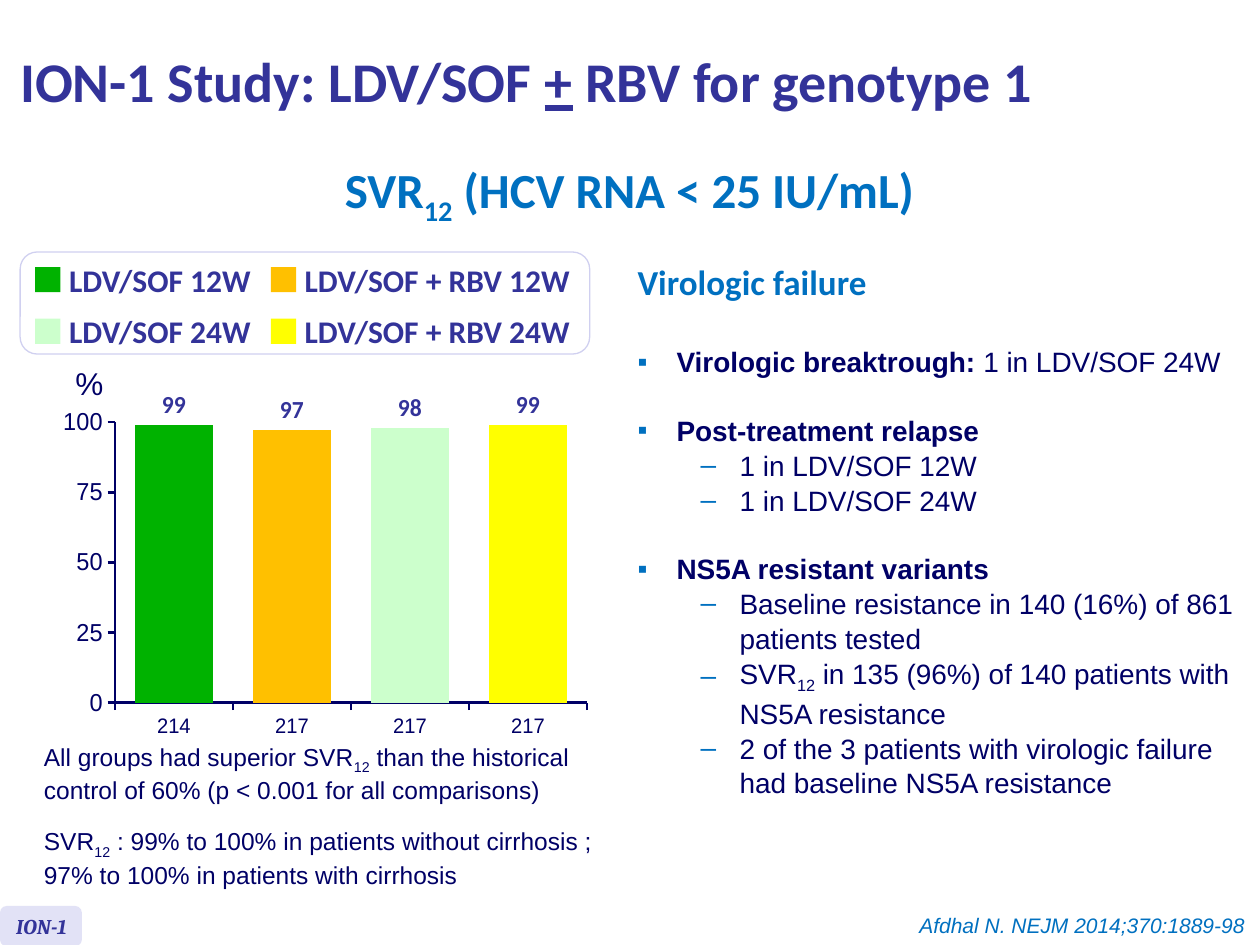
"""Build the ION-1 study slide: SVR12 column chart and virologic failure list."""
from lxml import etree
from pptx import Presentation
from pptx.chart.data import CategoryChartData
from pptx.dml.color import RGBColor
from pptx.enum import chart as ch, shapes, text
from pptx.oxml.ns import qn
from pptx.util import Inches, Pt

NAVY, INDIGO, BLUE = "000066", "333399", "0070C0"
rgb = RGBColor.from_string


def add_runs(paragraph, parts, size, color, font="Arial", bold=False, italic=False):
    for part in parts:
        words, style = part if isinstance(part, tuple) else (part, "")
        run = paragraph.add_run()
        run.text = words
        run.font.size = Pt(size)
        run.font.name = font
        run.font.color.rgb = rgb(color)
        run.font.bold = bold or style == "bold"
        run.font.italic = italic
        if style == "under":
            run.font.underline = True
        if style == "sub":
            run.font._element.set("baseline", "-25000")


def add_box(shape_type, box, fill, line=None):
    shape = slide.shapes.add_shape(shape_type, *map(Inches, box))
    shape.shadow.inherit = False
    shape.fill.solid()
    shape.fill.fore_color.rgb = rgb(fill)
    if line:
        shape.line.color.rgb = rgb(line)
        shape.line.width = Pt(0.75)
    else:
        shape.line.fill.background()


prs = Presentation()
prs.slide_width, prs.slide_height = Inches(10), Inches(7.5)
slide = prs.slides.add_slide(prs.slide_layouts[1])

title = slide.shapes.title
title.left, title.top, title.width, title.height = map(Inches, (0.06, 0.03, 9.83, 1.21))
title.text_frame.vertical_anchor = text.MSO_ANCHOR.MIDDLE
heading = title.text_frame.paragraphs[0]
heading.alignment = text.PP_ALIGN.LEFT
add_runs(heading, ["ION-1 Study: LDV/SOF ", ("+", "under"), " RBV for genotype 1"],
         32, INDIGO, "Calibri", bold=True)

ROUND, RECT = shapes.MSO_SHAPE.ROUNDED_RECTANGLE, shapes.MSO_SHAPE.RECTANGLE
add_box(ROUND, (0.16, 2, 4.52, 0.81), "FFFFFF", "D0D0F0")
add_box(ROUND, (0, 7.19, 0.65, 0.32), "E2E2F6")

LEFT, CENTER, RIGHT = text.PP_ALIGN.LEFT, text.PP_ALIGN.CENTER, text.PP_ALIGN.RIGHT
calibri_bold = {"font": "Calibri", "bold": True}
captions = [
    ((2.59, 1.22, 4.81, 0.57), CENTER, False, 28, BLUE, calibri_bold,
     [["SVR", ("12", "sub"), " (HCV RNA < 25 IU/mL)"]]),
    ((0.5, 2.84, 0.42, 0.4), LEFT, False, 18, NAVY, {}, [["%"]]),
    ((0.25, 5.84, 4.79, 0.57), LEFT, True, 14, NAVY, {},
     [["All groups had superior SVR", ("12", "sub"), " than the historical"],
      ["control of 60% (p < 0.001 for all comparisons)"]]),
    ((0.25, 6.51, 4.96, 0.57), LEFT, True, 14, NAVY, {},
     [["SVR", ("12", "sub"), " : 99% to 100% in patients without cirrhosis ;"],
      ["97% to 100% in patients with cirrhosis"]]),
    ((0.03, 7.2, 0.79, 0.3), LEFT, True, 12, INDIGO,
     {"font": "Cambria", "bold": True, "italic": True}, [["ION-1"]]),
    ((6.17, 7.19, 3.81, 0.3), RIGHT, True, 12, BLUE, {"italic": True},
     [["Afdhal N. NEJM 2014;370:1889-98"]]),
]

arms = [("LDV/SOF 12W", "00B200", 217 - 3, 99), ("LDV/SOF + RBV 12W", "FFC000", 217, 97),
        ("LDV/SOF 24W", "CCFFCC", 217, 98), ("LDV/SOF + RBV 24W", "FFFF00", 217, 99)]
for i, (arm, color, patients, svr) in enumerate(arms):
    x, y = 0.28 + 1.87 * (i % 2), 2.12 + 0.41 * (i // 2)
    add_box(RECT, (x, y, 0.2, 0.2), color)
    captions.append(((x + 0.17, y - 0.1, 1.69 + 0.67 * (i % 2), 0.4), LEFT, False,
                     18, INDIGO, calibri_bold, [[arm]]))

for box, align, wrap, size, color, style, lines in captions:
    frame = slide.shapes.add_textbox(*map(Inches, box)).text_frame
    frame.word_wrap = wrap
    for i, parts in enumerate(lines):
        paragraph = frame.add_paragraph() if i else frame.paragraphs[0]
        paragraph.alignment = align
        add_runs(paragraph, parts, size, color, **style)

failures = slide.placeholders[1]
failures.left, failures.top, failures.width, failures.height = map(Inches, (4.96, 2.02, 4.98, 4.27))
frame = failures.text_frame
frame.auto_size = text.MSO_AUTO_SIZE.NONE
findings = [
    ("", 0, ["Virologic failure"]),
    ("▪", 23.6, [("Virologic breaktrough:", "bold"), " 1 in LDV/SOF 24W"]),
    ("▪", 19.2, [("Post-treatment relapse", "bold")]),
    ("–", 0, ["1 in LDV/SOF 12W"]),
    ("–", 0, ["1 in LDV/SOF 24W"]),
    ("▪", 19.2, [("NS5A resistant variants", "bold")]),
    ("–", 0, ["Baseline resistance in 140 (16%) of 861 patients tested"]),
    ("–", 0, ["SVR", ("12", "sub"), " in 135 (96%) of 140 patients with NS5A resistance"]),
    ("–", 0, ["2 of the 3 patients with virologic failure had baseline NS5A resistance"]),
]
for i, (bullet, gap, parts) in enumerate(findings):
    paragraph = frame.add_paragraph() if i else frame.paragraphs[0]
    paragraph.level = 1 if bullet == "–" else 0
    paragraph.space_before = Pt(gap)
    props = paragraph._p.get_or_add_pPr()
    if bullet:
        paragraph.line_spacing = 1.04
        props.set("marL", str(Inches(0.31 + 0.5 * paragraph.level)))
        props.set("indent", str(Inches(-0.31)))
        bullet_color = etree.SubElement(props, qn("a:buClr"))
        etree.SubElement(bullet_color, qn("a:srgbClr"), val=BLUE)
        etree.SubElement(props, qn("a:buFont"), typeface="Arial")
        etree.SubElement(props, qn("a:buChar"), char=bullet)
        add_runs(paragraph, parts, 16, NAVY)
    else:
        paragraph.line_spacing = Pt(23.6)
        props.set("marL", "0")
        props.set("indent", "0")
        etree.SubElement(props, qn("a:buNone"))
        add_runs(paragraph, parts, 20, BLUE, **calibri_bold)

data = CategoryChartData()
data.categories = [str(patients) for _, _, patients, _ in arms]
data.add_series("SVR12 (%)", [svr for *_, svr in arms])
chart = slide.shapes.add_chart(ch.XL_CHART_TYPE.COLUMN_CLUSTERED,
                               *map(Inches, (0.5, 3.04, 4.2, 2.82)), data).chart
chart.has_legend = chart.has_title = False
chart.font.name, chart.font.size = "Arial", Pt(18)
for axis, size in ((chart.category_axis, 12), (chart.value_axis, 14)):
    axis.has_major_gridlines = False
    axis.major_tick_mark = ch.XL_TICK_MARK.OUTSIDE
    axis.format.line.color.rgb = rgb(NAVY)
    axis.format.line.width = Pt(1.5)
    axis.tick_labels.font.size = Pt(size)
    axis.tick_labels.font.color.rgb = rgb(NAVY)
scale = chart.value_axis
scale.minimum_scale, scale.maximum_scale, scale.major_unit = 0, 100, 25

plot = chart.plots[0]
plot.gap_width = 51
plot.vary_by_categories = False
plot.has_data_labels = True
labels = plot.data_labels
labels.show_value = True
labels.position = ch.XL_LABEL_POSITION.OUTSIDE_END
labels.font.name, labels.font.size, labels.font.bold = "Calibri", Pt(14), True
labels.font.color.rgb = rgb(INDIGO)
for i, (_, color, _, _) in enumerate(arms):
    fill = plot.series[0].points[i].format.fill
    fill.solid()
    fill.fore_color.rgb = rgb(color)

area = chart._chartSpace.chart.plotArea
for old in area.findall(qn("c:layout")):
    area.remove(old)
layout = etree.Element(qn("c:layout"))
area.insert(0, layout)
manual = etree.SubElement(layout, qn("c:manualLayout"))
for tag, value in (("layoutTarget", "inner"), ("xMode", "edge"), ("yMode", "edge"),
                   ("x", "0.06"), ("y", "0.11"), ("w", "0.93"), ("h", "0.79")):
    etree.SubElement(manual, qn(f"c:{tag}"), val=value)

prs.save("out.pptx")
